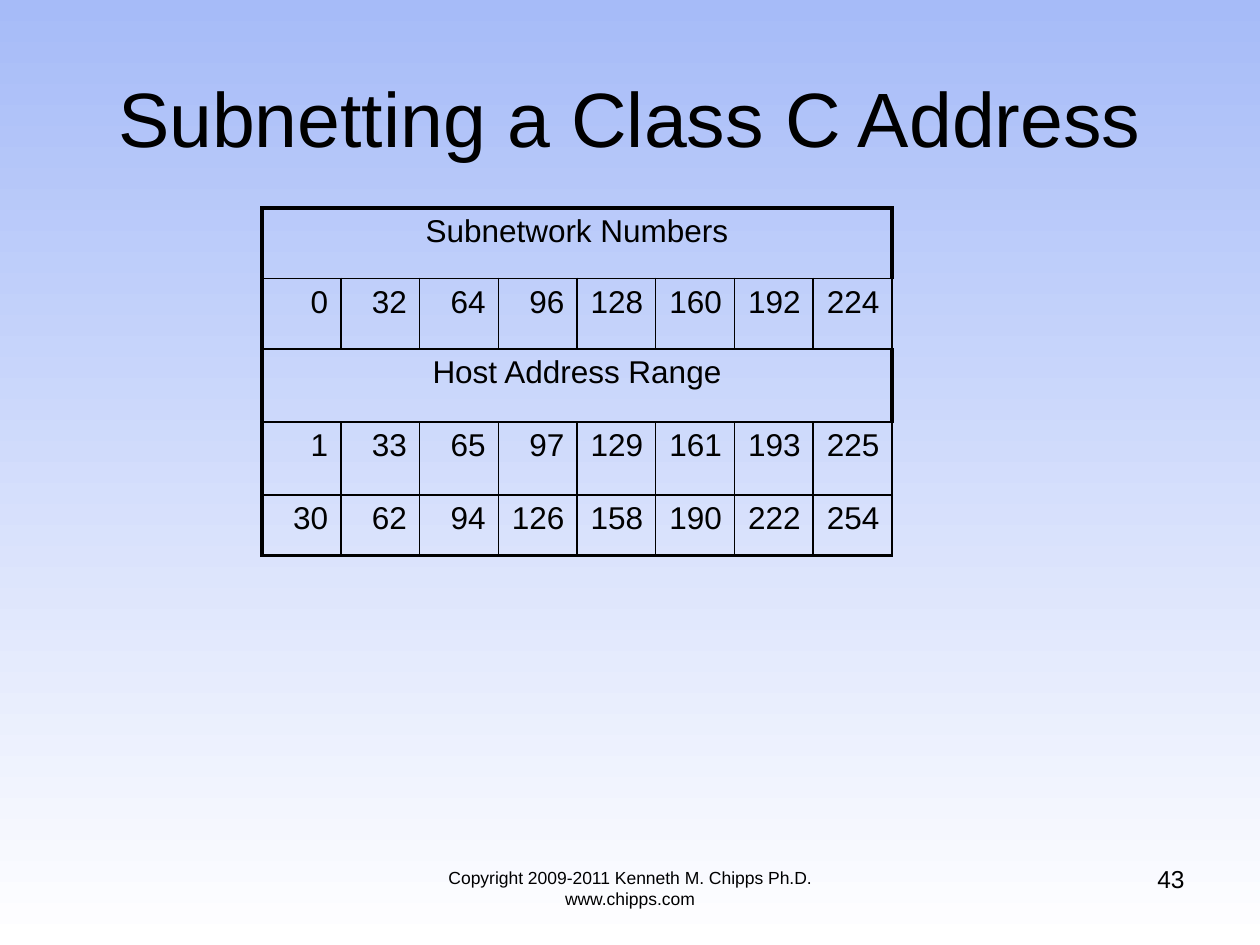
from dataclasses import dataclass

from lxml.etree import SubElement
from pptx import Presentation
from pptx.dml.color import RGBColor as RGB
from pptx.enum.text import MSO_ANCHOR as Anchor, PP_ALIGN as Align
from pptx.oxml.ns import qn
from pptx.util import Inches, Pt


@dataclass(frozen=True)
class Theme:
    font: str = "Arial"
    ink: str = "000000"
    sky: str = "A6BBF8"
    white: str = "FFFFFF"
    title: float = 44
    body: float = 18
    number: float = 14
    footer: float = 10
    thin: float = 1
    thick: float = 2.25


@dataclass(frozen=True)
class Label:
    text: str
    left: float
    top: float
    width: float
    height: float
    size: float
    align: Align
    anchor: Anchor = Anchor.TOP


THEME = Theme()

LABELS = [
    Label("Copyright 2009-2011 Kenneth M. Chipps Ph.D. www.chipps.com",
          3, 6.83, 4, 0.52, THEME.footer, Align.CENTER),
    Label("43", 7.17, 6.81, 2.33, 0.52, THEME.number, Align.RIGHT),
    Label("Subnetting a Class C Address",
          0.5, 0.3, 9, 1.25, THEME.title, Align.CENTER, Anchor.MIDDLE),
]

# Subnet size fixes every number in the table
STEP = 32
NETS = range(0, 256, STEP)
ROWS = [
    ["Subnetwork Numbers"],
    [str(net) for net in NETS],
    ["Host Address Range"],
    [str(net + 1) for net in NETS],
    [str(net + STEP - 2) for net in NETS],
]
HEIGHTS = [0.56, 0.56, 0.58, 0.58, 0.48]
LEFT, TOP, WIDTH = 2.08, 1.65, 5


def style(frame, size: float, align: Align) -> None:
    for para in frame.paragraphs:
        para.alignment = align
        for run in para.runs:
            run.font.name = THEME.font
            run.font.size = Pt(size)
            run.font.color.rgb = RGB.from_string(THEME.ink)


def add_label(slide, label: Label) -> None:
    box = slide.shapes.add_textbox(Inches(label.left), Inches(label.top),
                                   Inches(label.width), Inches(label.height))
    frame = box.text_frame
    frame.word_wrap = True
    frame.vertical_anchor = label.anchor
    frame.text = label.text
    style(frame, label.size, label.align)


def add_edge(cell, side: str, width: float) -> None:
    props = cell._tc.get_or_add_tcPr()
    line = SubElement(props, qn(f"a:ln{side}"), w=str(int(Pt(width))))
    fill = SubElement(line, qn("a:solidFill"))
    SubElement(fill, qn("a:srgbClr"), val=THEME.ink)


def add_grid(slide) -> None:
    count = len(NETS)
    shape = slide.shapes.add_table(len(ROWS), count, Inches(LEFT), Inches(TOP),
                                   Inches(WIDTH), Inches(sum(HEIGHTS)))
    table = shape.table
    table.first_row = table.horz_banding = False
    for col in table.columns:
        col.width = Inches(WIDTH / count)
    for row, (texts, height) in enumerate(zip(ROWS, HEIGHTS)):
        table.rows[row].height = Inches(height)
        banner = len(texts) == 1
        if banner:
            table.cell(row, 0).merge(table.cell(row, count - 1))
        for col in range(count):
            cell = table.cell(row, col)
            # Heavy lines go around the outside and beside the banners
            heavy = {"L": col == 0, "R": banner,
                     "T": row == 0, "B": row == len(ROWS) - 1}
            for side, thick in heavy.items():
                add_edge(cell, side, THEME.thick if thick else THEME.thin)
            cell.fill.background()
            if col < len(texts):
                cell.text_frame.text = texts[col]
                style(cell.text_frame, THEME.body,
                      Align.CENTER if banner else Align.RIGHT)


def paint(slide) -> None:
    fill = slide.background.fill
    fill.gradient()
    fill.gradient_angle = 270
    for stop, color, place in zip(fill.gradient_stops,
                                  (THEME.sky, THEME.white), (0, 1)):
        stop.color.rgb = RGB.from_string(color)
        stop.position = place


def main() -> None:
    deck = Presentation()
    deck.slide_width, deck.slide_height = Inches(10), Inches(7.5)
    slide = deck.slides.add_slide(deck.slide_layouts[6])
    paint(slide)
    for label in LABELS:
        add_label(slide, label)
    add_grid(slide)
    deck.save("out.pptx")


if __name__ == "__main__":
    main()
